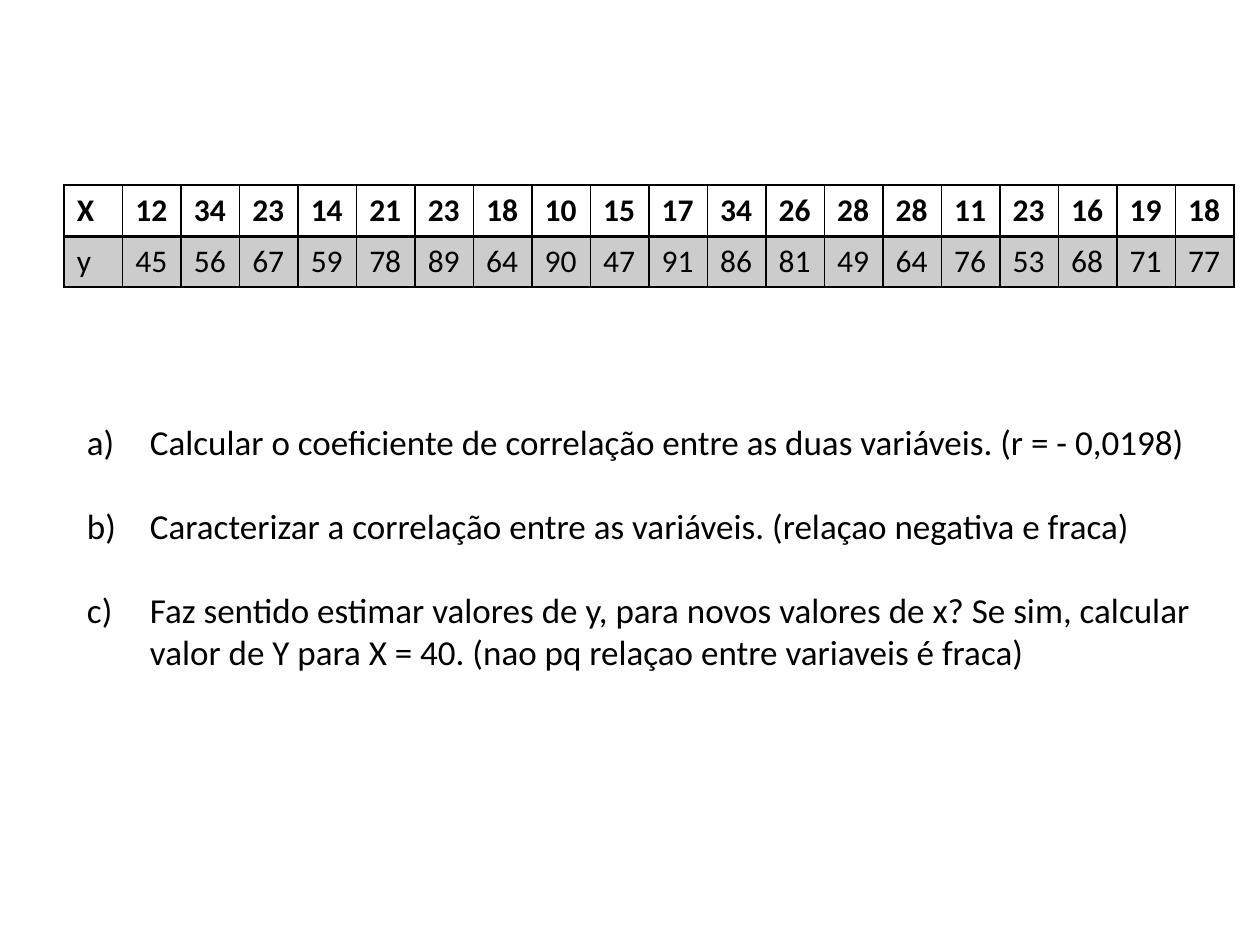
from lxml.etree import SubElement
from pptx import Presentation
from pptx.dml.color import RGBColor
from pptx.enum.text import MSO_ANCHOR, MSO_AUTO_SIZE
from pptx.oxml.ns import qn
from pptx.util import Inches, Pt

BLACK = RGBColor(0x00, 0x00, 0x00)
FONT = "Calibri"
X_VALUES = [12, 34, 23, 14, 21, 23, 18, 10, 15, 17,
            34, 26, 28, 28, 11, 23, 16, 19, 18]
Y_VALUES = [45, 56, 67, 59, 78, 89, 64, 90, 47, 91,
            86, 81, 49, 64, 76, 53, 68, 71, 77]
QUESTIONS = [
    "Calcular o coeficiente de correlação entre as duas variáveis. (r = - 0,0198)",
    "Caracterizar a correlação entre as variáveis. (relaçao negativa e fraca)",
    "Faz sentido estimar valores de y, para novos valores de x? Se sim, "
    "calcular valor de Y para X = 40. (nao pq relaçao entre variaveis é fraca)",
]


def add_run(p, text, size, bold=False):
    r = p.add_run()
    r.text = text
    r.font.name = FONT
    r.font.size = Pt(size)
    r.font.bold = bold
    r.font.color.rgb = BLACK


def set_borders(cell, **widths):
    """Draw black cell borders; widths maps L, R, T, B to points."""
    tc_pr = cell._tc.get_or_add_tcPr()
    for side, width in widths.items():
        ln = SubElement(tc_pr, qn(f"a:ln{side}"), w=str(Pt(width)))
        fill = SubElement(ln, qn("a:solidFill"))
        SubElement(fill, qn("a:srgbClr"), val=str(BLACK))


def shade(cell, percent):
    """Fill the cell with black at the given opacity."""
    cell.fill.solid()
    cell.fill.fore_color.rgb = BLACK
    color = cell._tc.tcPr.find(f"{qn('a:solidFill')}/{qn('a:srgbClr')}")
    SubElement(color, qn("a:alpha"), val=str(percent * 1000))


def add_data_table(s, left, top, width, height):
    rows = [["X", *X_VALUES], ["y", *Y_VALUES]]
    n_cols = len(rows[0])
    table = s.shapes.add_table(len(rows), n_cols, left, top, width, height).table
    table.horz_banding = False
    for col in table.columns:
        col.width = int(width / n_cols)
    for i, values in enumerate(rows):
        header = i == 0
        for j, value in enumerate(values):
            cell = table.cell(i, j)
            add_run(cell.text_frame.paragraphs[0], str(value), 18, bold=header)
            if header:
                set_borders(cell, L=1, R=1, T=1, B=2)
                cell.fill.background()
            else:
                set_borders(cell, L=1, R=1, T=2, B=1)
                shade(cell, 20)


def add_questions(body, left, top, width, height):
    body.left, body.top, body.width, body.height = left, top, width, height
    tf = body.text_frame
    tf.word_wrap = True
    tf.auto_size = MSO_AUTO_SIZE.SHAPE_TO_FIT_TEXT
    tf.vertical_anchor = MSO_ANCHOR.TOP
    for i, question in enumerate(QUESTIONS):
        p = tf.add_paragraph() if i else tf.paragraphs[0]
        p.space_before = Pt(24 if i else 0)
        p_pr = p._p.get_or_add_pPr()
        p_pr.set("marL", str(Inches(0.5)))
        p_pr.set("indent", str(-Inches(0.5)))
        SubElement(p_pr, qn("a:buFont"), typeface="+mj-lt")
        SubElement(p_pr, qn("a:buAutoNum"), type="alphaLcParenR")
        add_run(p, question, 20)


def main():
    prs = Presentation()
    prs.slide_width, prs.slide_height = Inches(10), Inches(7.5)
    s = prs.slides.add_slide(prs.slide_layouts[1])
    title = s.shapes.title._element
    title.getparent().remove(title)
    add_data_table(s, Inches(0.51), Inches(1.47), Inches(9.29), Inches(0.81))
    add_questions(s.placeholders[1],
                  Inches(0.59), Inches(3.29), Inches(8.98), Inches(2.12))
    prs.save("out.pptx")


if __name__ == "__main__":
    main()
